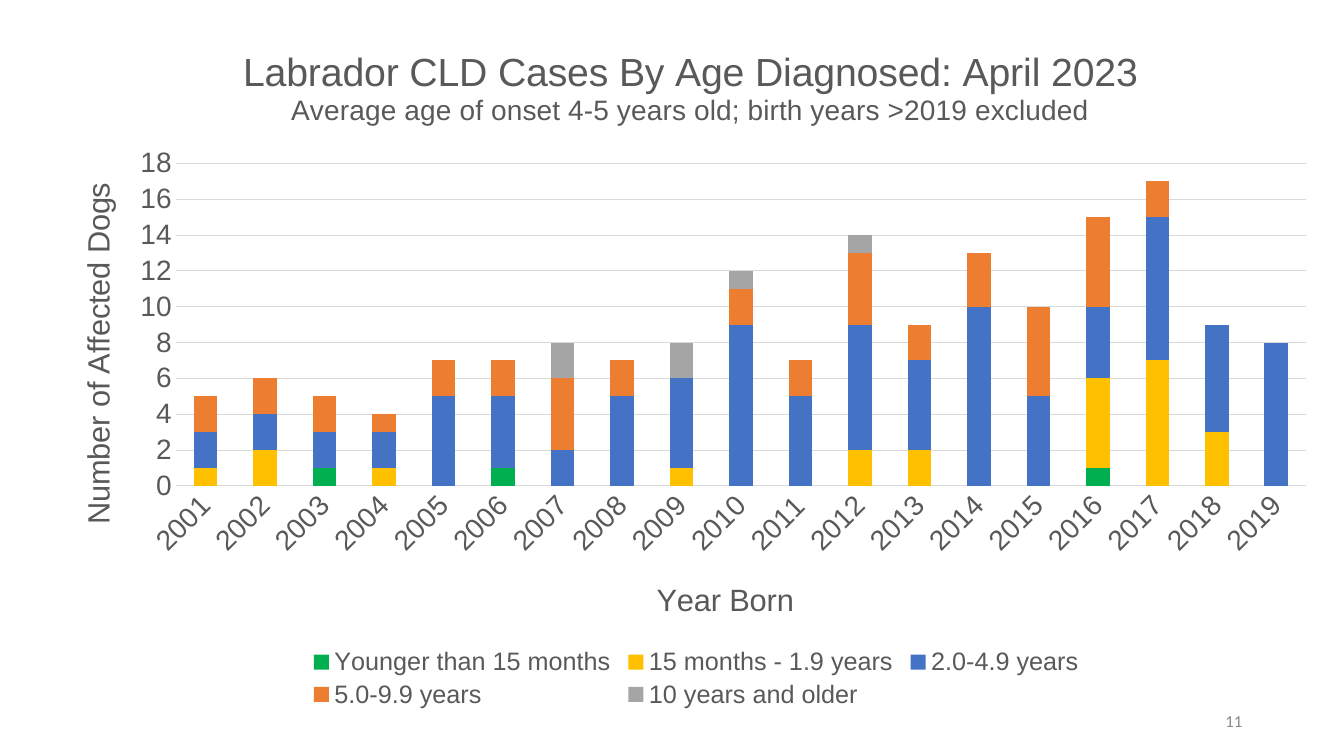
from typing import NamedTuple

from lxml import etree
from pptx import Presentation
from pptx import util as u
from pptx.chart.data import CategoryChartData
from pptx.dml.color import RGBColor
from pptx.enum import chart as ch
from pptx.enum import text as t
from pptx.oxml import ns

GREY = "595959"
RULE = "D9D9D9"
YEARS = range(2001, 2020)


class Group(NamedTuple):
    name: str
    color: str
    cases: dict[int, int]


def run(first: int, *counts: int) -> dict[int, int]:
    """Map consecutive birth years to counts, dropping zeros."""
    return {first + i: n for i, n in enumerate(counts) if n}


GROUPS = [
    Group("Younger than 15 months", "00B050", {2003: 1, 2006: 1, 2016: 1}),
    Group("15 months - 1.9 years", "FFC000",
          {2001: 1, 2002: 2, 2004: 1, 2009: 1, 2012: 2, 2013: 2,
           2016: 5, 2017: 7, 2018: 3}),
    Group("2.0-4.9 years", "4472C4",
          run(2001, 2, 2, 2, 2, 5, 4, 2, 5, 5, 9, 5, 7, 5, 10, 5, 4, 8, 6, 8)),
    Group("5.0-9.9 years", "ED7D31",
          run(2001, 2, 2, 2, 1, 2, 2, 4, 2, 0, 2, 2, 4, 2, 3, 5, 5, 2)),
    Group("10 years and older", "A5A5A5", {2007: 2, 2009: 2, 2010: 1, 2012: 1}),
]


def rgb(code: str) -> RGBColor:
    return RGBColor.from_string(code)


def style(font, size: float, color: str = GREY, face: str = "Arial") -> None:
    font.size, font.name, font.bold = u.Pt(size), face, False
    font.color.rgb = rgb(color)


def write(para, words: str, *, size: float, color: str = GREY,
          face: str = "Arial", align=t.PP_ALIGN.CENTER) -> None:
    para.alignment = align
    part = para.add_run()
    part.text = words
    style(part.font, size, color, face)


def rule(line) -> None:
    line.color.rgb = rgb(RULE)
    line.width = u.Pt(0.75)


def place(item, **spots: float) -> None:
    """Give a chart part a manual layout in fractions of the chart."""
    for old in item.findall(ns.qn("c:layout")):
        item.remove(old)
    layout = etree.Element(ns.qn("c:layout"))
    manual = etree.SubElement(layout, ns.qn("c:manualLayout"))
    if item.tag == ns.qn("c:plotArea"):
        etree.SubElement(manual, ns.qn("c:layoutTarget"), val="inner")
    for key in ("x", "y"):
        etree.SubElement(manual, ns.qn(f"c:{key}Mode"), val="edge")
    for key, val in spots.items():
        etree.SubElement(manual, ns.qn(f"c:{key}"), val=str(val))
    heads = [ns.qn("c:tx"), ns.qn("c:legendPos")]
    spot = sum(child.tag in heads for child in item)
    item.insert(spot, layout)


def name_axis(axis, words: str, x: float, y: float) -> None:
    title = axis.axis_title
    write(title.text_frame.paragraphs[0], words, size=22)
    place(title._element, x=x, y=y)
    style(axis.tick_labels.font, 20)
    axis.major_tick_mark = axis.minor_tick_mark = ch.XL_TICK_MARK.NONE


def draw_chart(slide) -> None:
    data = CategoryChartData()
    data.categories = [str(year) for year in YEARS]
    for group in GROUPS:
        data.add_series(group.name, [group.cases.get(year) for year in YEARS])
    chart = slide.shapes.add_chart(
        ch.XL_CHART_TYPE.COLUMN_STACKED, u.Inches(0.47), u.Inches(0.26),
        u.Inches(12.74), u.Inches(6.81), data).chart
    style(chart.font, 10, "000000")

    plot = chart.plots[0]
    plot.gap_width, plot.overlap = 150, 100
    plot.vary_by_categories = False
    for group, series in zip(GROUPS, plot.series):
        series.format.fill.solid()
        series.format.fill.fore_color.rgb = rgb(group.color)

    frame = chart.chart_title.text_frame
    write(frame.paragraphs[0], "Labrador CLD Cases By Age Diagnosed: April 2023",
          size=28)
    write(frame.add_paragraph(),
          "Average age of onset 4-5 years old; birth years >2019 excluded",
          size=20)
    place(chart.chart_title._element, x=0.15, y=0.03)

    born, dogs = chart.category_axis, chart.value_axis
    name_axis(born, "Year Born", 0.47, 0.8)
    name_axis(dogs, "Number of Affected Dogs", 0.02, 0.22)
    rule(born.format.line)
    born.tick_labels.font._element.getparent().getparent().getparent().find(
        ns.qn("a:bodyPr")).set("rot", "-2700000")
    dogs.format.line.fill.background()
    rule(dogs.major_gridlines.format.line)
    dogs.minimum_scale, dogs.maximum_scale, dogs.major_unit = 0, 18, 2
    place(plot._element.getparent(), x=0.1, y=0.2, w=0.88, h=0.47)

    chart.has_legend = True
    key = chart.legend
    key.position = ch.XL_LEGEND_POSITION.BOTTOM
    key.include_in_layout = False
    style(key.font, 18)
    place(key._element, x=0.2, y=0.9, w=0.61, h=0.1)


def draw_page(slide) -> None:
    frame = slide.shapes.add_textbox(
        u.Inches(9.42), u.Inches(6.95), u.Inches(3), u.Inches(0.4)).text_frame
    frame.word_wrap = True
    frame.vertical_anchor = t.MSO_ANCHOR.MIDDLE
    write(frame.paragraphs[0], "11", size=12, color="888888", face="Calibri",
          align=t.PP_ALIGN.RIGHT)


def main() -> None:
    deck = Presentation()
    deck.slide_width, deck.slide_height = u.Inches(13.33), u.Inches(7.5)
    slide = deck.slides.add_slide(deck.slide_layouts[6])
    draw_chart(slide)
    draw_page(slide)
    deck.save("out.pptx")


if __name__ == "__main__":
    main()
